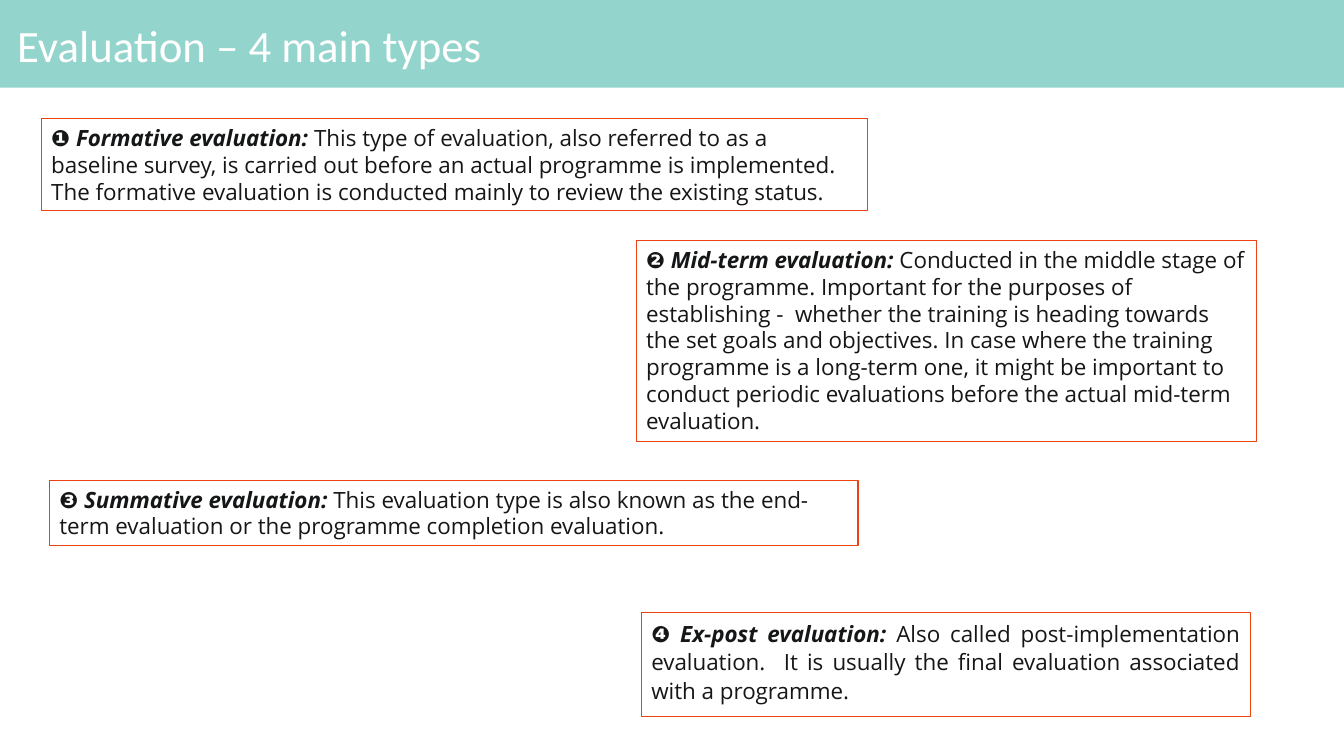
import pptx
import pptx.util
import pptx.dml.color
import pptx.enum.shapes
import pptx.enum.text
import pptx.oxml.ns
import lxml.etree

PX = 9144  # 100 px to the inch
SLIDE_SIZE = (1333, 750)
TEAL, WHITE, ORANGE, INK = "93D4CC", "FFFFFF", "EC4110", "151617"
ALIGN = pptx.enum.text.PP_ALIGN
ANCHOR = pptx.enum.text.MSO_ANCHOR
RECTANGLE = pptx.enum.shapes.MSO_SHAPE.RECTANGLE

# Box in px, bold lead, explanation
BOXES = [
    ((41, 118, 819, 91), "❶ Formative evaluation: ",
     "This type of evaluation, also referred to as a baseline survey, is carried out "
     "before an actual programme is implemented. The formative evaluation is conducted "
     "mainly to review the existing status."),
    ((631, 239, 615, 199), "❷ Mid-term evaluation: ",
     "Conducted in the middle stage of the programme. Important for the purposes of "
     "establishing -  whether the training is heading towards the set goals and "
     "objectives. In case where the training programme is a long-term one, it might be "
     "important to conduct periodic evaluations before the actual mid-term evaluation."),
    ((49, 477, 802, 64), "❸ Summative evaluation: ",
     "This evaluation type is also known as the end-term evaluation or the programme "
     "completion evaluation."),
]
EX_POST = ((636, 608, 604, 103), "❹ Ex-post evaluation: ",
           "Also called post-implementation evaluation.  It is usually the final "
           "evaluation associated with a programme.")


def color(value):
    return pptx.dml.color.RGBColor.from_string(value)


def place(shape, box):
    shape.left, shape.top, shape.width, shape.height = (n * PX for n in box)


def set_frame(frame, margins, anchor):
    frame.word_wrap = True
    frame.auto_size = pptx.enum.text.MSO_AUTO_SIZE.NONE
    frame.vertical_anchor = anchor
    frame.margin_left, frame.margin_top, frame.margin_right, frame.margin_bottom = (
        n * PX for n in margins)


def add_span(para, text, font, size, tint, strong=False):
    span = para.add_run()
    span.text = text
    span.font.name = font
    span.font.size = pptx.util.Pt(size)
    span.font.color.rgb = color(tint)
    span.font.bold = span.font.italic = strong


def add_header(page, box):
    """Teal band with the slide title on it."""
    left, top, width, height = box
    title = page.shapes.title
    band = page.shapes.add_shape(RECTANGLE, *(n * PX for n in box))
    band.shadow.inherit = False
    band.fill.solid()
    band.fill.fore_color.rgb = color(TEAL)
    band.line.fill.background()
    title.element.addprevious(band.element)  # band goes behind the title

    place(title, (left + 11, top + 9, width - 27, height - 9))
    set_frame(title.text_frame, (6, 6, 6, 6), ANCHOR.MIDDLE)
    para = title.text_frame.paragraphs[0]
    para.alignment = ALIGN.LEFT
    para.line_spacing = 0.9
    add_span(para, "Evaluation – 4 main types", "Calibri", 32, WHITE)


def fill_box(shape, lead, text):
    """Outlined box: bold italic lead, then the explanation."""
    shape.fill.background()
    shape.line.color.rgb = color(ORANGE)
    shape.line.width = pptx.util.Pt(0.75)
    set_frame(shape.text_frame, (10, 5, 10, 5), ANCHOR.TOP)
    para = shape.text_frame.paragraphs[0]
    para.alignment = ALIGN.LEFT
    add_span(para, lead, "Open Sans", 16, INK, strong=True)
    add_span(para, text, "Open Sans", 16, INK)
    return para


def add_ex_post(page, box, lead, text):
    """Body placeholder, justified and without a bullet."""
    body = page.placeholders[1]
    place(body, box)
    para = fill_box(body, lead, text)
    para.alignment = ALIGN.JUSTIFY
    para.line_spacing = 1.07
    para.space_before = pptx.util.Pt(10)
    para.space_after = pptx.util.Pt(8)
    properties = para._p.get_or_add_pPr()
    properties.set("marL", "0")
    properties.set("indent", "0")
    lxml.etree.SubElement(properties, pptx.oxml.ns.qn("a:buNone"))


def add_type_box(page, box, lead, text):
    shape = page.shapes.add_shape(RECTANGLE, *(n * PX for n in box))
    shape.shadow.inherit = False
    fill_box(shape, lead, text)


def main():
    deck = pptx.Presentation()
    deck.slide_width, deck.slide_height = (n * PX for n in SLIDE_SIZE)
    page = deck.slides.add_slide(deck.slide_layouts[1])
    add_header(page, (0, 0, SLIDE_SIZE[0], 87))
    add_ex_post(page, *EX_POST)
    for entry in BOXES:
        add_type_box(page, *entry)
    deck.save("out.pptx")


if __name__ == "__main__":
    main()
